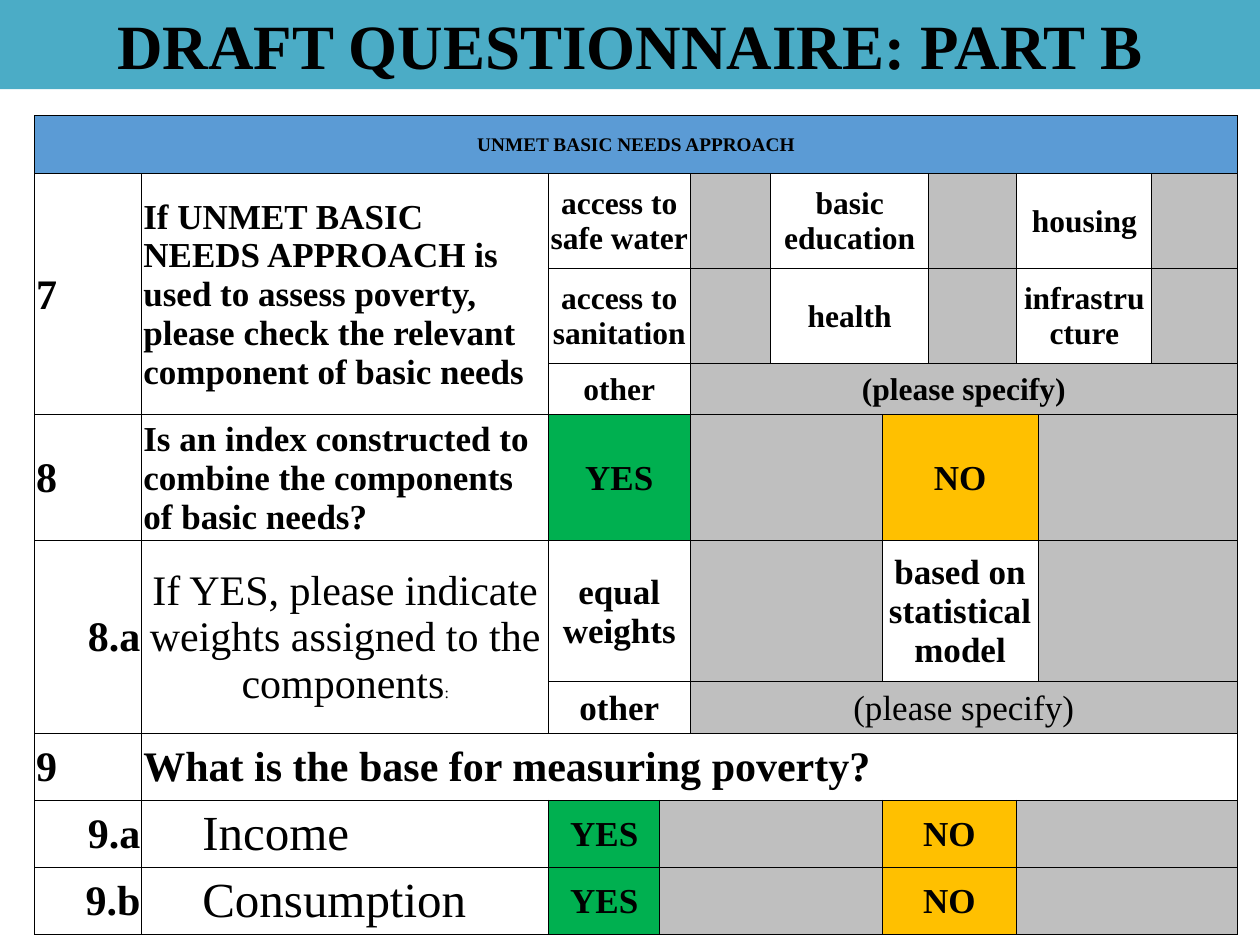
from lxml.etree import SubElement
from pptx import Presentation
from pptx.dml.color import RGBColor
from pptx.enum.text import MSO_ANCHOR, MSO_AUTO_SIZE, PP_ALIGN
from pptx.oxml.ns import qn
from pptx.util import Cm, Pt

FONT = "Times New Roman"
BLACK, TEAL, BLUE = "000000", "4BACC6", "5B9BD5"
GREY, GREEN, AMBER = "BFBFBF", "00B050", "FFC000"
LEFT, CENTER, RIGHT = PP_ALIGN.LEFT, PP_ALIGN.CENTER, PP_ALIGN.RIGHT

COL_WIDTHS = [2.16, 8.2, 2.24, 0.61, 1.63, 2.24, 0.94, 1.78, 0.43, 2.29, 1.73]
ROW_HEIGHTS = [1.17, 1.91, 1.91, 1.04, 2.54, 2.84, 1.04, 1.35, 1.35, 1.35]


def rgb(value):
    return RGBColor.from_string(value)


class SlideBuilder:
    def __init__(self, prs, layout):
        self.s = prs.slides.add_slide(layout)
        self.font = FONT
        self.color = BLACK

    def run(self, p, text, size, bold=True):
        r = p.add_run()
        r.text = text
        r.font.name = self.font
        r.font.size = Pt(size)
        r.font.bold = bold
        r.font.color.rgb = rgb(self.color)

    def title(self, text, width, height):
        sp = self.s.shapes.title
        sp.left, sp.top, sp.width, sp.height = 0, 0, Cm(width), Cm(height)
        sp.fill.solid()
        sp.fill.fore_color.rgb = rgb(TEAL)
        tf = sp.text_frame
        tf.auto_size = MSO_AUTO_SIZE.NONE
        tf.vertical_anchor = MSO_ANCHOR.MIDDLE
        p = tf.paragraphs[0]
        p.alignment = CENTER
        self.run(p, text, 36)

    def table(self, left, top, widths, heights):
        frame = self.s.shapes.add_table(len(heights), len(widths), Cm(left), Cm(top),
                                        Cm(sum(widths)), Cm(sum(heights)))
        self.tbl = frame.table
        self.tbl.first_row = self.tbl.horz_banding = False
        for col, width in zip(self.tbl.columns, widths):
            col.width = Cm(width)
        for row, height in zip(self.tbl.rows, heights):
            row.height = Cm(height)
        for cell in self.tbl.iter_cells():
            self.borders(cell)
            cell.fill.background()

    def borders(self, cell):
        tc_pr = cell._tc.get_or_add_tcPr()
        for side in ("a:lnL", "a:lnR", "a:lnT", "a:lnB"):
            ln = SubElement(tc_pr, qn(side), w=str(Pt(0.5)))
            fill = SubElement(ln, qn("a:solidFill"))
            SubElement(fill, qn("a:srgbClr"), val=self.color)

    def cell(self, row, col, text="", size=20, rows=1, cols=1, fill=None,
             align=CENTER, bold=True, indent=0.03, tail=None):
        """Fill one cell, merged over rows and cols; tail is a small closing run."""
        cell = self.tbl.cell(row, col)
        if rows > 1 or cols > 1:
            cell.merge(self.tbl.cell(row + rows - 1, col + cols - 1))
        if fill:
            cell.fill.solid()
            cell.fill.fore_color.rgb = rgb(fill)
        cell.vertical_anchor = MSO_ANCHOR.MIDDLE
        cell.margin_left, cell.margin_right = Cm(indent), Cm(0.03)
        cell.margin_top, cell.margin_bottom = Cm(0.03), 0
        if text:
            p = cell.text_frame.paragraphs[0]
            p.alignment = align
            self.run(p, text, size, bold)
            if tail:
                self.run(p, tail, 9, bold)

    def choice_row(self, row, yes, no, spans, colors=(None, None)):
        """Two answers, each followed by a grey box to tick."""
        col = 2
        answers = (yes, "", no, "")
        fills = (colors[0], GREY, colors[1], GREY)
        for text, span, fill in zip(answers, spans, fills):
            self.cell(row, col, text, cols=span, fill=fill)
            col += span


def main():
    prs = Presentation()
    prs.slide_width, prs.slide_height = Cm(25.4), Cm(19.05)
    b = SlideBuilder(prs, prs.slide_layouts[5])
    b.title("DRAFT QUESTIONNAIRE: PART B", 25.4, 1.8)
    b.table(0.7, 2.33, COL_WIDTHS, ROW_HEIGHTS)

    b.cell(0, 0, "UNMET BASIC NEEDS APPROACH", 11, cols=11, fill=BLUE)

    numbers = [(1, "7", 3, LEFT), (4, "8", 1, LEFT), (5, "8.a", 2, RIGHT),
               (7, "9", 1, LEFT), (8, "9.a", 1, RIGHT), (9, "9.b", 1, RIGHT)]
    for row, number, rows, align in numbers:
        b.cell(row, 0, number, 24, rows=rows, align=align)

    b.cell(1, 1, "If UNMET BASIC NEEDS APPROACH is used to assess poverty, please "
           "check the relevant component of basic needs", rows=3, align=LEFT)
    b.cell(4, 1, "Is an index constructed to combine the components of basic needs?",
           align=LEFT)
    b.cell(5, 1, "If YES, please indicate weights assigned to the components", 24,
           rows=2, bold=False, tail=":")
    b.cell(7, 1, "What is the base for measuring poverty?", 24, cols=10, align=LEFT)

    needs = [("access to safe water", "basic education", "housing"),
             ("access to sanitation", "health", "infrastructure")]
    for row, names in enumerate(needs, start=1):
        for col, name in zip((2, 5, 8), names):
            b.cell(row, col, name, 18, cols=2)
            b.cell(row, col + 2, fill=GREY)

    for row, size, bold in ((3, 18, True), (6, 20, False)):
        b.cell(row, 2, "other", size, cols=2)
        b.cell(row, 4, "(please specify)", size, cols=7, fill=GREY, bold=bold)

    wide, narrow = (2, 2, 3, 2), (1, 3, 2, 3)
    b.choice_row(4, "YES", "NO", wide, (GREEN, AMBER))
    b.choice_row(5, "equal weights", "based on statistical model", wide)
    for row, base in ((8, "Income"), (9, "Consumption")):
        b.cell(row, 1, base, 28, align=LEFT, bold=False, indent=1.22)
        b.choice_row(row, "YES", "NO", narrow, (GREEN, AMBER))

    prs.save("out.pptx")


if __name__ == "__main__":
    main()
